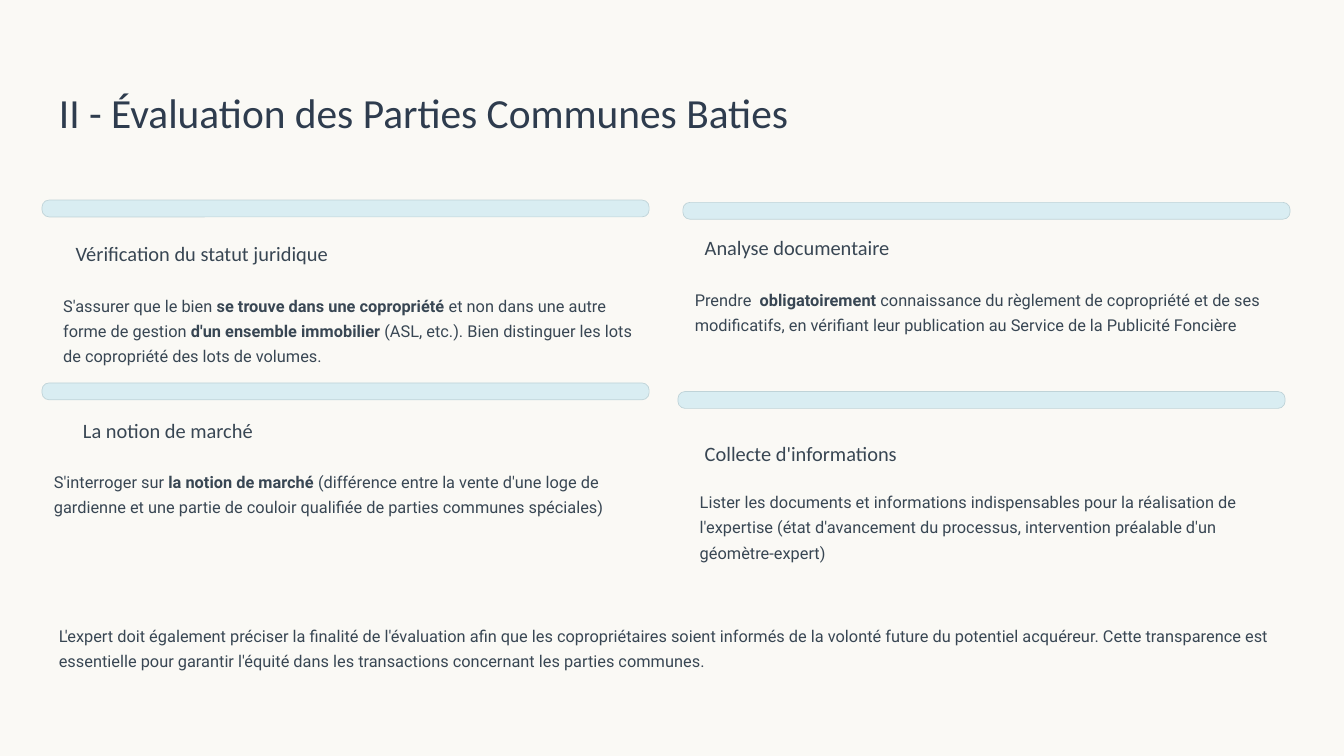
from dataclasses import dataclass

from pptx import Presentation
from pptx import util as u
from pptx.dml.color import RGBColor
from pptx.enum import shapes, text


@dataclass(frozen=True)
class Theme:
    paper: str = "FAF9F5"
    bar: str = "D9EDF2"
    bar_line: str = "BFD3D8"
    title: tuple = ("Calibri", 35.5, "2E3C4E", 44.5)
    heading: tuple = ("Calibri", 17.5, "384653", 22)
    body: tuple = ("Roboto", 14, "384653", 21.5)


class Deck:
    def __init__(self, theme):
        self.theme = theme
        self.prs = Presentation()
        self.prs.slide_width, self.prs.slide_height = u.Cm(40.64), u.Cm(22.86)
        self.s = self.prs.slides.add_slide(self.prs.slide_layouts[5])
        self.paint(self.s.background.fill, theme.paper)

    def paint(self, fill, color):
        fill.solid()
        fill.fore_color.rgb = RGBColor.from_string(color)

    def set_text(self, sp, content, style, wrap):
        name, size, color, spacing = style
        tf = sp.text_frame
        frame = dict(margin_left=0, margin_top=0, margin_right=0, margin_bottom=0,
                     word_wrap=wrap, auto_size=text.MSO_AUTO_SIZE.NONE,
                     vertical_anchor=text.MSO_ANCHOR.TOP)
        for key, value in frame.items():
            setattr(tf, key, value)
        for i, line in enumerate(content.split("\n")):
            p = tf.add_paragraph() if i else tf.paragraphs[0]
            p.alignment = text.PP_ALIGN.LEFT
            p.line_spacing = u.Pt(spacing)
            for j, part in enumerate(line.split("**")):
                r = p.add_run()
                r.text = part
                for key, value in dict(name=name, size=u.Pt(size), bold=j % 2 == 1).items():
                    setattr(r.font, key, value)
                r.font.color.rgb = RGBColor.from_string(color)

    def title(self, content, box):
        sp = self.s.shapes.title
        sp.left, sp.top, sp.width, sp.height = map(u.Cm, box)
        self.set_text(sp, content, self.theme.title, False)

    def label(self, content, box, style, wrap=True):
        sp = self.s.shapes.add_textbox(*map(u.Cm, box))
        self.set_text(sp, content, style, wrap)

    def bar(self, left, top):
        sp = self.s.shapes.add_shape(shapes.MSO_SHAPE.ROUNDED_RECTANGLE,
                                     *map(u.Cm, (left, top, 18.36, 0.51)))
        sp.adjustments[0] = 0.42
        sp.shadow.inherit = False
        self.paint(sp.fill, self.theme.bar)
        self.paint(sp.line.fill, self.theme.bar_line)
        sp.line.width = u.Pt(0.6)

    def section(self, bar, heading, heading_box, body, body_box):
        self.bar(*bar)
        self.label(heading, heading_box, self.theme.heading, False)
        self.label(body, body_box, self.theme.body)


SECTIONS = [
    ((1.27, 6.05), "Vérification du statut juridique", (2.29, 7.26, 8.64, 1.24),
     "S'assurer que le bien **se trouve dans une copropriété **et non dans une autre "
     "forme de gestion **d'un ensemble immobilier **(ASL, etc.). Bien distinguer les lots\n"
     "de copropriété des lots de volumes.", (1.91, 8.79, 17.73, 2.84)),
    ((20.65, 6.12), "Analyse documentaire", (21.31, 7.06, 6.15, 1.24),
     "Prendre  **obligatoirement** connaissance du règlement de copropriété et de ses "
     "modificatifs, en vérifiant leur publication au Service de la Publicité Foncière",
     (21.01, 8.61, 17.35, 3.05)),
    ((1.27, 11.58), "La notion de marché", (2.51, 12.62, 6.1, 1.52),
     "S'interroger sur **la notion de marché **(différence entre la vente d'une loge de "
     "gardienne et une partie de couloir qualifiée de parties communes spéciales)",
     (1.63, 14.12, 18.01, 2.49)),
    ((20.5, 11.84), "Collecte d'informations", (21.31, 13.31, 6.35, 1.24),
     "Lister les documents et informations indispensables pour la réalisation de "
     "l'expertise (état d'avancement du processus, intervention préalable d'un "
     "géomètre-expert)", (21.16, 14.73, 17.2, 2.95)),
]


def main():
    deck = Deck(Theme())
    deck.title("II - Évaluation des Parties Communes Baties", (1.78, 2.57, 36.8, 1.57))
    for section in SECTIONS:
        deck.section(*section)
    deck.label("L'expert doit également préciser la finalité de l'évaluation afin que les "
               "copropriétaires soient informés de la volonté future du potentiel acquéreur. "
               "Cette transparence est essentielle pour garantir l'équité dans les "
               "transactions concernant les parties communes.",
               (1.78, 18.77, 37.08, 1.52), deck.theme.body)
    deck.prs.save("out.pptx")


if __name__ == "__main__":
    main()
